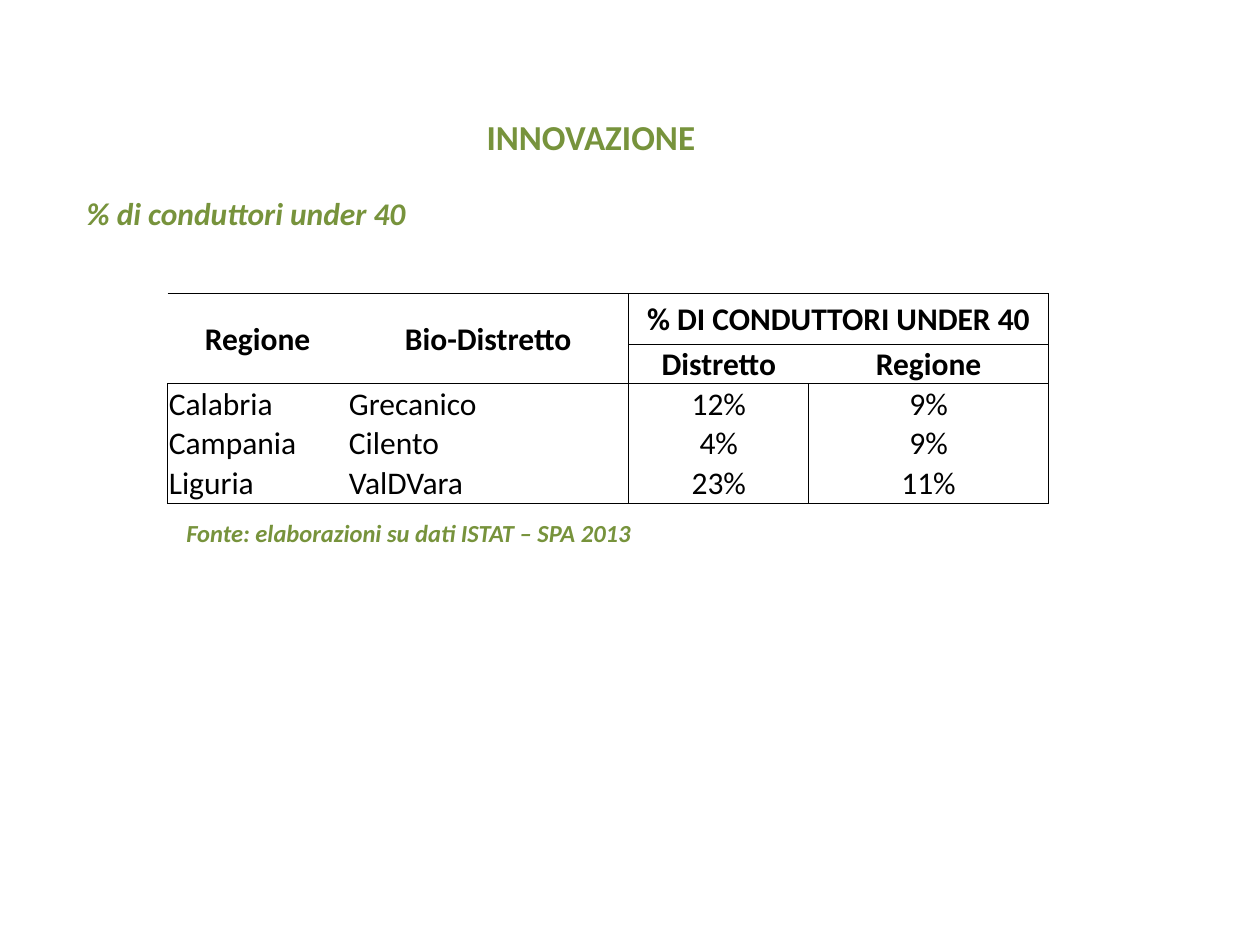
from pptx import Presentation
from pptx import util as u
from pptx.dml.color import RGBColor
from pptx.enum import text
from pptx.oxml import parse_xml
from pptx.oxml.ns import nsdecls

GREEN = RGBColor(0x77, 0x93, 0x3C)
BLACK = RGBColor(0, 0, 0)
FONT = "Calibri"

COLUMN_WIDTHS = [1.43, 2.23, 1.43, 1.9]
ROW_HEIGHTS = [0.4] + [0.31] * 4
HEADER_ROWS = 2
ROWS = [
    ["Regione", "Bio-Distretto", "% DI CONDUTTORI UNDER 40", ""],
    ["", "", "Distretto", "Regione"],
    ["Calabria", "Grecanico", "12%", "9%"],
    ["Campania", "Cilento", "4%", "9%"],
    ["Liguria", "ValDVara", "23%", "11%"],
]
MERGES = [((0, 0), (1, 0)), ((0, 1), (1, 1)), ((0, 2), (0, 3))]


def style_paragraph(para, size, color, bold=True, italic=False, align=text.PP_ALIGN.LEFT):
    para.alignment = align
    para.font.name = FONT
    para.font.size = u.Pt(size)
    para.font.bold = bold
    para.font.italic = italic
    para.font.color.rgb = color


def fill_text(box, words, size, **style):
    frame = box.text_frame
    frame.text = words
    frame.word_wrap = True
    frame.auto_size = text.MSO_AUTO_SIZE.NONE
    frame.vertical_anchor = text.MSO_ANCHOR.TOP
    style_paragraph(frame.paragraphs[0], size, GREEN, **style)


def add_title(page, words):
    title = page.shapes.title
    title.left, title.top = u.Inches(2.17), u.Inches(0.87)
    title.width, title.height = u.Inches(5.04), u.Inches(0.44)
    fill_text(title, words, 20, align=text.PP_ALIGN.CENTER)


def add_label(page, words, size, left, top, width, height):
    box = page.shapes.add_textbox(*map(u.Inches, (left, top, width, height)))
    fill_text(box, words, size, italic=True)


def has_horizontal_rule(line, column):
    return line in (0, HEADER_ROWS, len(ROWS)) or (line == 1 and column >= 2)


def has_vertical_rule(line, row):
    return line in (2, 4) or (line in (0, 3) and row >= HEADER_ROWS)


def set_borders(cell, row, column):
    bottom = row + (cell.span_height if cell.is_merge_origin else 1)
    right = column + (cell.span_width if cell.is_merge_origin else 1)
    sides = {
        "lnL": has_vertical_rule(column, row),
        "lnR": has_vertical_rule(right, row),
        "lnT": has_horizontal_rule(row, column),
        "lnB": has_horizontal_rule(bottom, column),
    }
    properties = cell._tc.get_or_add_tcPr()
    for side, ruled in sides.items():
        paint = f'<a:solidFill><a:srgbClr val="{BLACK}"/></a:solidFill>' if ruled else "<a:noFill/>"
        properties.append(parse_xml(
            f'<a:{side} {nsdecls("a")} w="{u.Pt(0.5)}">{paint}</a:{side}>'))


def format_cell(cell, words, row, column):
    header = row < HEADER_ROWS
    cell.margin_left = cell.margin_right = cell.margin_top = u.Inches(0.01)
    cell.margin_bottom = 0
    cell.vertical_anchor = text.MSO_ANCHOR.MIDDLE if row == 0 else text.MSO_ANCHOR.BOTTOM
    cell.text = words
    centred = header or column >= 2
    style_paragraph(cell.text_frame.paragraphs[0], 18, BLACK, bold=header,
                    align=text.PP_ALIGN.CENTER if centred else text.PP_ALIGN.LEFT)
    set_borders(cell, row, column)
    cell.fill.background()


def add_share_table(page):
    frame = page.shapes.add_table(
        len(ROWS), len(COLUMN_WIDTHS), u.Inches(1.33), u.Inches(2.33),
        u.Inches(sum(COLUMN_WIDTHS)), u.Inches(sum(ROW_HEIGHTS)))
    table = frame.table
    table.first_row = table.horz_banding = False
    for column, width in zip(table.columns, COLUMN_WIDTHS):
        column.width = u.Inches(width)
    for row, height in zip(table.rows, ROW_HEIGHTS):
        row.height = u.Inches(height)
    for first, last in MERGES:
        table.cell(*first).merge(table.cell(*last))
    for r, row_words in enumerate(ROWS):
        for c, words in enumerate(row_words):
            format_cell(table.cell(r, c), words, r, c)


def main():
    deck = Presentation()
    deck.slide_width, deck.slide_height = u.Inches(10), u.Inches(7.5)
    page = deck.slides.add_slide(deck.slide_layouts[5])

    # Table of young farm managers
    add_share_table(page)

    # Headings and source line
    add_title(page, "INNOVAZIONE")
    add_label(page, "% di conduttori under 40", 18, 0.59, 1.49, 7.64, 0.4)
    add_label(page, "Fonte: elaborazioni su dati ISTAT – SPA 2013", 14, 1.38, 4.06, 4.41, 0.34)

    deck.save("out.pptx")


if __name__ == "__main__":
    main()
